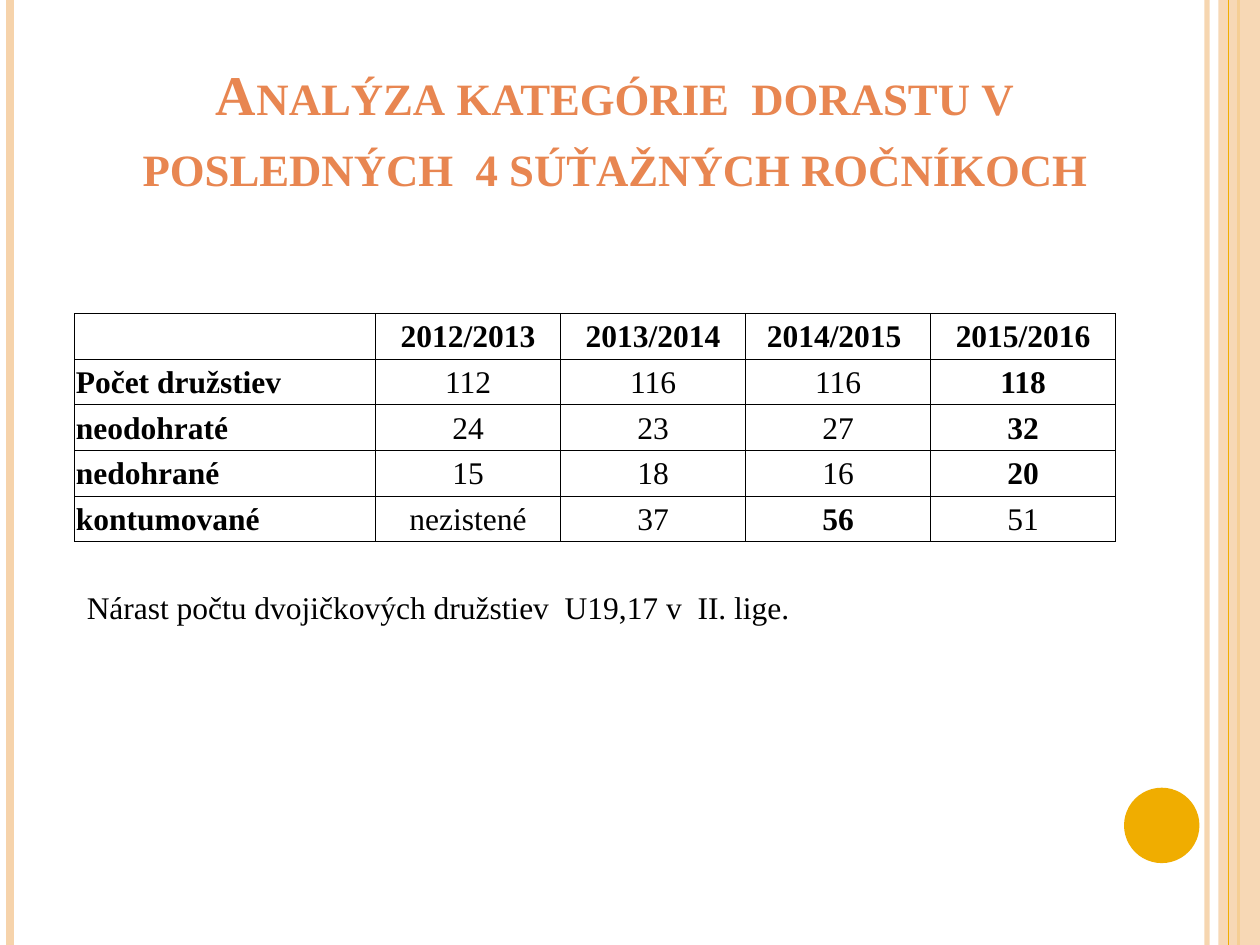
"""Build the slide on the youth category over the last four seasons."""
from lxml import etree
from pptx import Presentation
from pptx.dml.color import RGBColor
from pptx.enum.shapes import MSO_CONNECTOR, MSO_SHAPE
from pptx.enum.text import MSO_ANCHOR, PP_ALIGN
from pptx.oxml.ns import qn
from pptx.util import Cm, Pt

STRAIGHT, RECT, OVAL = MSO_CONNECTOR.STRAIGHT, MSO_SHAPE.RECTANGLE, MSO_SHAPE.OVAL
TOP, MIDDLE, BOTTOM = MSO_ANCHOR.TOP, MSO_ANCHOR.MIDDLE, MSO_ANCHOR.BOTTOM
LEFT, CENTER = PP_ALIGN.LEFT, PP_ALIGN.CENTER

COLORS = {"peach": "F6D3AB", "gold": "F0AD00", "title": "E88651", "black": "000000"}
FONT = "Times New Roman"
WIDTH, HEIGHT = 25.4, 19.05

TITLE = "Analýza kategórie  dorastu v posledných  4 súťažných ročníkoch"
NOTE = "Nárast počtu dvojičkových družstiev  U19,17 v  II. lige."
ROWS = [
    ["", "2012/2013", "2013/2014", "2014/2015 ", "2015/2016"],
    ["Počet družstiev", "112", "116", "116", "118"],
    ["neodohraté", "24", "23", "27", "32"],
    ["nedohrané", "15", "18", "16", "20"],
    ["kontumované", "nezistené", "37", "56", "51"],
]
BOLD_VALUES = {(1, 4), (2, 4), (3, 4), (4, 3)}
COLUMN_WIDTHS = [6.07] + [3.73] * 4
ROW_HEIGHT = 0.92

BACK_STRIPES = [(24.33, "peach", 3, 93), (0.2, "peach", 4.5, 100), (24.97, "gold", 1.5, 100)]
FRONT_STRIPES = [(24.77, "gold", 0.75, 100)]
BAND = (RECT, 24.56, 0, 0.84, HEIGHT, "peach", 87)
DISC = (OVAL, 22.66, 15.88, 1.52, 1.52, "gold", 100)


def rgb(name):
    return RGBColor.from_string(COLORS[name])


def set_alpha(element, percent):
    if percent < 100:
        color = next(element.iter(qn("a:srgbClr")))
        etree.SubElement(color, qn("a:alpha")).set("val", str(percent * 1000))


def add_stripe(slide, x, color, width, alpha):
    s = slide.shapes.add_connector(STRAIGHT, Cm(x), 0, Cm(x), Cm(HEIGHT))
    s.line.color.rgb = rgb(color)
    s.line.width = Pt(width)
    props = s._element.spPr
    set_alpha(props, alpha)
    etree.SubElement(props, qn("a:effectLst"))


def add_solid(slide, kind, x, y, w, h, color, alpha):
    s = slide.shapes.add_shape(kind, Cm(x), Cm(y), Cm(w), Cm(h))
    s.shadow.inherit = False
    s.fill.solid()
    s.fill.fore_color.rgb = rgb(color)
    s.line.fill.background()
    set_alpha(s._element.spPr, alpha)


def write(tf, text, align=LEFT, color="black", size=18, bold=False):
    p = tf.paragraphs[0]
    p.alignment = align
    r = p.add_run()
    r.text = text
    for name, value in {"name": FONT, "size": Pt(size), "bold": bold}.items():
        setattr(r.font, name, value)
    r.font.color.rgb = rgb(color)
    return p, r


def add_text(slide, box, text, anchor=TOP, **style):
    tf = slide.shapes.add_textbox(*map(Cm, box)).text_frame
    tf.word_wrap = True
    tf.vertical_anchor = anchor
    p, r = write(tf, text, **style)
    return tf, p, r


def format_cell(cell):
    margins = {"margin_left": 0.03, "margin_right": 0.03, "margin_top": 0.03, "margin_bottom": 0}
    for name, value in margins.items():
        setattr(cell, name, Cm(value))
    cell.vertical_anchor = MIDDLE
    props = cell._tc.get_or_add_tcPr()
    for side in ("lnL", "lnR", "lnT", "lnB"):
        line = etree.SubElement(props, qn(f"a:{side}"), w=str(Pt(0.5)))
        fill = etree.SubElement(line, qn("a:solidFill"))
        etree.SubElement(fill, qn("a:srgbClr"), val=COLORS["black"])
    cell.fill.background()


def add_results(slide):
    size = (sum(COLUMN_WIDTHS), ROW_HEIGHT * len(ROWS))
    frame = slide.shapes.add_table(len(ROWS), len(COLUMN_WIDTHS), *map(Cm, (1.5, 6.32, *size)))
    table = frame.table
    for column, width in zip(table.columns, COLUMN_WIDTHS):
        column.width = Cm(width)
    for i, values in enumerate(ROWS):
        table.rows[i].height = Cm(ROW_HEIGHT)
        for j, value in enumerate(values):
            cell = table.cell(i, j)
            format_cell(cell)
            if value:
                bold = i == 0 or j == 0 or (i, j) in BOLD_VALUES
                write(cell.text_frame, value, CENTER if j else LEFT, bold=bold)


def main():
    prs = Presentation()
    prs.slide_width, prs.slide_height = Cm(WIDTH), Cm(HEIGHT)
    slide = prs.slides.add_slide(prs.slide_layouts[6])
    for stripe in BACK_STRIPES:
        add_stripe(slide, *stripe)
    add_solid(slide, *BAND)
    for stripe in FRONT_STRIPES:
        add_stripe(slide, *stripe)
    add_solid(slide, *DISC)
    tf, p, r = add_text(slide, (0.89, 1.32, 23.01, 2.79), TITLE, BOTTOM,
                        align=CENTER, color="title", size=32, bold=True)
    tf.margin_left = tf.margin_right = Cm(0.6)
    p.line_spacing = 1.06
    r.font._element.set("cap", "small")
    add_results(slide)
    add_text(slide, (1.5, 11.73, 17.75, 1.02), NOTE)
    prs.save("out.pptx")


if __name__ == "__main__":
    main()
